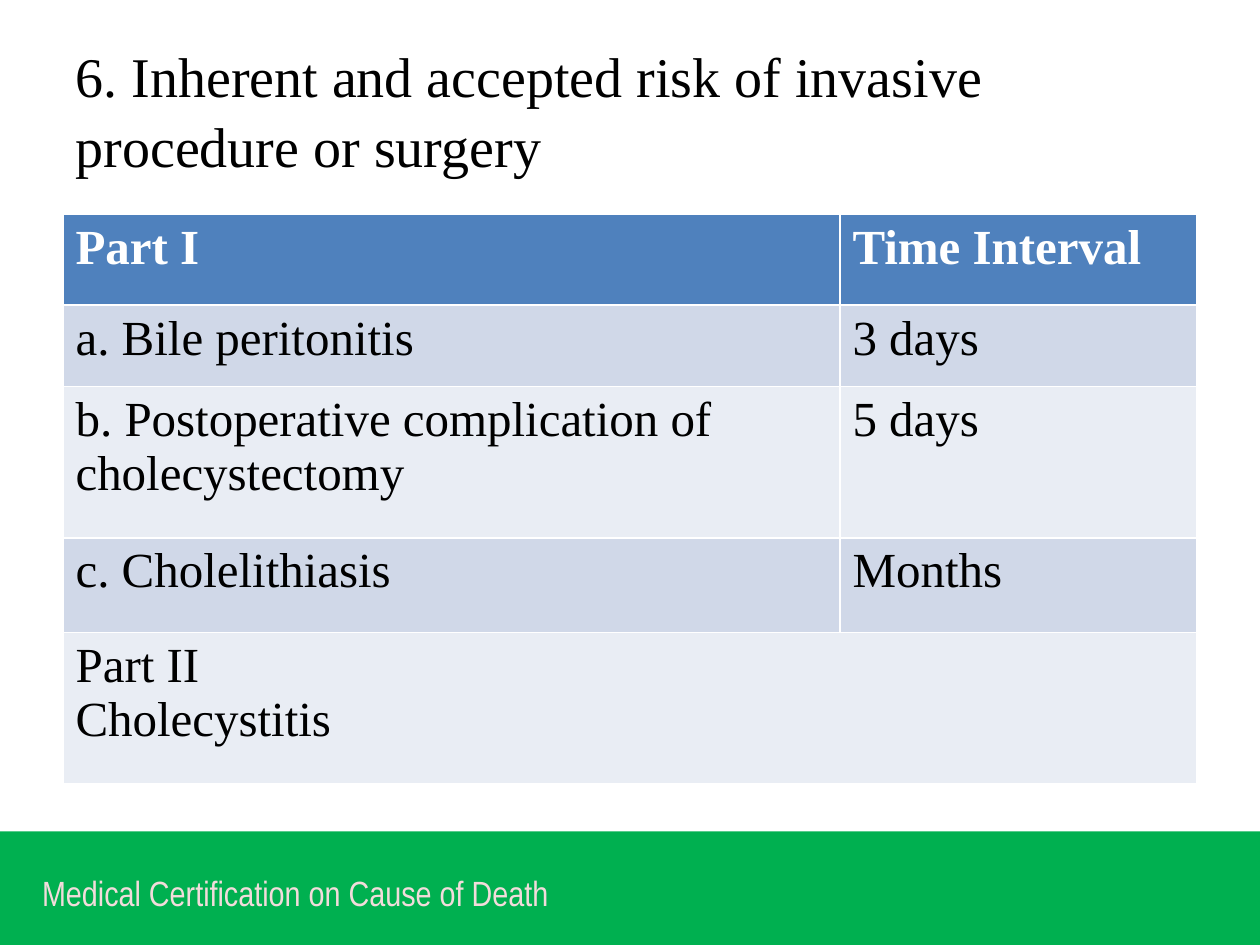
from pptx import Presentation
from pptx.dml.color import RGBColor
from pptx.enum.shapes import MSO_SHAPE
from pptx.enum.text import MSO_ANCHOR, MSO_AUTO_SIZE, PP_ALIGN
from pptx.util import Pt

TITLE = "6. Inherent and accepted risk of invasive procedure or surgery"
FOOTER = "Medical Certification on Cause of Death"
ROWS = [
    ("Part I", "Time Interval"),
    ("a. Bile peritonitis", "3 days"),
    ("b. Postoperative complication of cholecystectomy", "5 days"),
    ("c. Cholelithiasis", "Months"),
    ("Part II\nCholecystitis",),
]
COL_WIDTHS = [444, 204]
ROW_HEIGHTS = [52, 46.5, 86.5, 54, 86.5]
HEADER_FILL, BAND_FILLS = "4F81BD", ("D0D8E8", "E9EDF4")

SERIF = "Times New Roman"
TITLE_FONT = dict(name=SERIF, size=Pt(32), bold=False)
CELL_FONT = dict(name=SERIF, size=Pt(28), bold=False)
HEADER_FONT = CELL_FONT | dict(bold=True)
FOOTER_FONT = dict(name="Arial Narrow", size=Pt(20), bold=False)


def rgb(value):
    return RGBColor.from_string(value)


def fill(item, color):
    item.fill.solid()
    item.fill.fore_color.rgb = rgb(color)


def write(tf, text, font, color):
    tf.text = text
    for p in tf.paragraphs:
        for r in p.runs:
            for key, value in font.items():
                setattr(r.font, key, value)
            r.font.color.rgb = rgb(color)


def box(left, top, width, height):
    return Pt(left), Pt(top), Pt(width), Pt(height)


prs = Presentation()
prs.slide_width, prs.slide_height = Pt(720), Pt(540)
s = prs.slides.add_slide(prs.slide_layouts[5])

band = s.shapes.add_shape(MSO_SHAPE.RECTANGLE, *box(0, 475, 720, 65))
band.shadow.inherit = False
fill(band, "00B050")
band.line.fill.background()

tf = s.shapes.add_textbox(*box(24, 493, 372, 34)).text_frame
tf.word_wrap = True
tf.margin_left = tf.margin_top = tf.margin_right = tf.margin_bottom = 0
tf.vertical_anchor = MSO_ANCHOR.MIDDLE
write(tf, FOOTER, FOOTER_FONT, "F2DCDB")

title = s.shapes.title
title.left, title.top, title.width, title.height = box(36, 21.6, 648, 80.6)
tf = title.text_frame
tf.auto_size = MSO_AUTO_SIZE.NONE
tf.vertical_anchor = MSO_ANCHOR.MIDDLE
write(tf, TITLE, TITLE_FONT, "000000")
tf.paragraphs[0].alignment = PP_ALIGN.LEFT
tf.paragraphs[0].line_spacing = 1.05

table = s.shapes.add_table(
    len(ROWS), len(COL_WIDTHS),
    *box(36, 122.4, sum(COL_WIDTHS), sum(ROW_HEIGHTS))).table
for column, width in zip(table.columns, COL_WIDTHS):
    column.width = Pt(width)
for i, (row, height) in enumerate(zip(ROWS, ROW_HEIGHTS)):
    table.rows[i].height = Pt(height)
    if len(row) == 1:
        table.cell(i, 0).merge(table.cell(i, len(COL_WIDTHS) - 1))
    for j, text in enumerate(row):
        cell = table.cell(i, j)
        fill(cell, BAND_FILLS[(i - 1) % 2] if i else HEADER_FILL)
        write(cell.text_frame, text, CELL_FONT if i else HEADER_FONT,
              "000000" if i else "FFFFFF")

prs.save("out.pptx")
